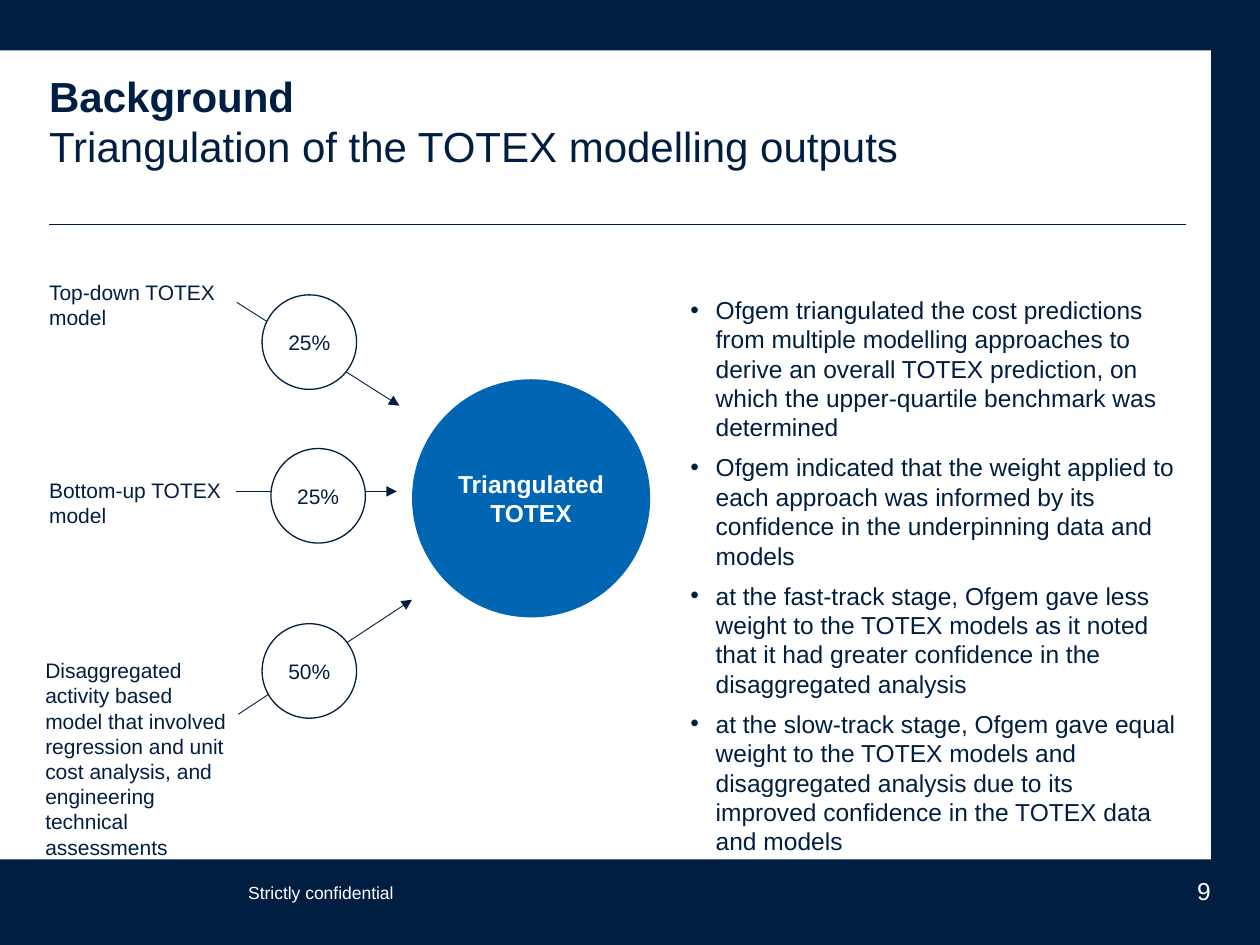
from dataclasses import dataclass

from lxml import etree
from pptx import Presentation
from pptx.dml.color import RGBColor
from pptx.enum.shapes import MSO_CONNECTOR, MSO_SHAPE
from pptx.enum.text import MSO_ANCHOR, PP_ALIGN
from pptx.oxml.ns import qn
from pptx.util import Inches, Pt

RECTANGLE, OVAL = MSO_SHAPE.RECTANGLE, MSO_SHAPE.OVAL
STRAIGHT = MSO_CONNECTOR.STRAIGHT
LEFT, CENTER, RIGHT = PP_ALIGN.LEFT, PP_ALIGN.CENTER, PP_ALIGN.RIGHT
MIDDLE = MSO_ANCHOR.MIDDLE


@dataclass(frozen=True)
class Theme:
    font: str = "Arial"
    navy: RGBColor = RGBColor(0x00, 0x1E, 0x41)
    blue: RGBColor = RGBColor(0x00, 0x66, 0xB3)
    white: RGBColor = RGBColor(0xFF, 0xFF, 0xFF)
    title: int = 24
    body: int = 14
    label: int = 12
    footer: int = 10


THEME = Theme()

TITLE, SUBTITLE = "Background", "Triangulation of the TOTEX modelling outputs"
FINDINGS = [
    "Ofgem triangulated the cost predictions from multiple modelling approaches to "
    "derive an overall TOTEX prediction, on which the upper-quartile benchmark was "
    "determined",
    "Ofgem indicated that the weight applied to each approach was informed by its "
    "confidence in the underpinning data and models",
    "at the fast-track stage, Ofgem gave less weight to the TOTEX models as it noted "
    "that it had greater confidence in the disaggregated analysis",
    "at the slow-track stage, Ofgem gave equal weight to the TOTEX models and "
    "disaggregated analysis due to its improved confidence in the TOTEX data and models",
]
# label, label box, weight, weight circle corner, arrow start, arrow end
MODELS = [
    ("Top-down TOTEX model", (0.39, 2.22, 1.5, 0.4),
     "25%", (2.08, 2.34), (1.88, 2.4), (3.17, 3.22)),
    ("Bottom-up TOTEX model", (0.39, 3.79, 1.5, 0.4),
     "25%", (2.15, 3.56), (1.87, 3.9), (3.15, 3.9)),
    ("Disaggregated activity based model that involved regression and unit cost "
     "analysis, and engineering technical assessments", (0.36, 5.22, 1.5, 1.62),
     "50%", (2.08, 4.95), (1.89, 5.67), (3.27, 4.76)),
]
WEIGHT_SIZE = 0.75
RESULT, RESULT_BOX = "Triangulated TOTEX", (3.27, 3.01, 1.89, 1.89)


def set_font(target, size, color, bold=False):
    font = target.font
    font.name, font.size, font.bold = THEME.font, Pt(size), bold
    font.color.rgb = color


def clear_margins(frame):
    frame.word_wrap = True
    frame.margin_left = frame.margin_top = frame.margin_right = frame.margin_bottom = 0


def add_text(slide, box, text, size, color, align=LEFT):
    frame = slide.shapes.add_textbox(*map(Inches, box)).text_frame
    clear_margins(frame)
    paragraph = frame.paragraphs[0]
    paragraph.text, paragraph.alignment = text, align
    set_font(paragraph, size, color)


def add_filled(slide, preset, box, fill, outline=None):
    shape = slide.shapes.add_shape(preset, *map(Inches, box))
    shape.shadow.inherit = False
    shape.fill.solid()
    shape.fill.fore_color.rgb = fill
    if outline is None:
        shape.line.fill.background()
    else:
        shape.line.color.rgb, shape.line.width = outline, Pt(0.75)
    return shape


def add_circle(slide, box, text, size, color, fill, outline=None, bold=False):
    frame = add_filled(slide, OVAL, box, fill, outline).text_frame
    clear_margins(frame)
    frame.vertical_anchor = MIDDLE
    paragraph = frame.paragraphs[0]
    paragraph.text, paragraph.alignment = text, CENTER
    set_font(paragraph, size, color, bold)


def add_line(slide, start, end, width, arrow=False):
    line = slide.shapes.add_connector(STRAIGHT, *map(Inches, (*start, *end)))
    line.line.color.rgb, line.line.width = THEME.navy, Pt(width)
    if arrow:
        etree.SubElement(line.line._get_or_add_ln(), qn("a:tailEnd"), type="triangle")
    etree.SubElement(line._element.spPr, qn("a:effectLst"))


def add_title(slide):
    frame = slide.shapes.add_textbox(*map(Inches, (0.39, 0.56, 9.02, 0.91))).text_frame
    clear_margins(frame)
    paragraph = frame.paragraphs[0]
    heading = paragraph.add_run()
    heading.text = TITLE
    set_font(heading, THEME.title, THEME.navy, bold=True)
    paragraph.add_line_break()
    subheading = paragraph.add_run()
    subheading.text = SUBTITLE
    set_font(subheading, THEME.title, THEME.navy)


def add_findings(slide):
    frame = slide.shapes.add_textbox(*map(Inches, (5.48, 2.34, 3.89, 4.56))).text_frame
    clear_margins(frame)
    for index, finding in enumerate(FINDINGS):
        paragraph = frame.add_paragraph() if index else frame.paragraphs[0]
        paragraph.text, paragraph.space_after = finding, Pt(6)
        properties = paragraph._p.get_or_add_pPr()
        properties.set("marL", str(Inches(0.2)))
        properties.set("indent", str(-Inches(0.2)))
        etree.SubElement(properties, qn("a:buFont"), typeface=THEME.font)
        etree.SubElement(properties, qn("a:buChar"), char="•")
        set_font(paragraph, THEME.body, THEME.navy)


def add_diagram(slide):
    add_circle(slide, RESULT_BOX, RESULT, THEME.body, THEME.white, THEME.blue, bold=True)
    for label, label_box, weight, corner, start, end in MODELS:
        add_text(slide, label_box, label, THEME.label, THEME.navy)
        add_line(slide, start, end, 0.5, arrow=True)
        add_circle(slide, (*corner, WEIGHT_SIZE, WEIGHT_SIZE), weight,
                   THEME.label, THEME.navy, THEME.white, outline=THEME.navy)


def main():
    deck = Presentation()
    deck.slide_width, deck.slide_height = Inches(10), Inches(7.5)
    slide = deck.slides.add_slide(deck.slide_layouts[6])
    add_filled(slide, RECTANGLE, (0, 0, 10, 7.5), THEME.navy)
    add_filled(slide, RECTANGLE, (0, 0.4, 9.61, 6.42), THEME.white)
    add_line(slide, (0.39, 1.78), (9.41, 1.78), 0.75)
    add_title(slide)
    add_findings(slide)
    add_text(slide, (1.97, 7, 1.46, 0.17), "Strictly confidential",
             THEME.footer, THEME.white)
    add_text(slide, (8.74, 6.95, 0.87, 0.23), "9", THEME.body, THEME.white, RIGHT)
    add_diagram(slide)
    deck.save("out.pptx")


if __name__ == "__main__":
    main()
